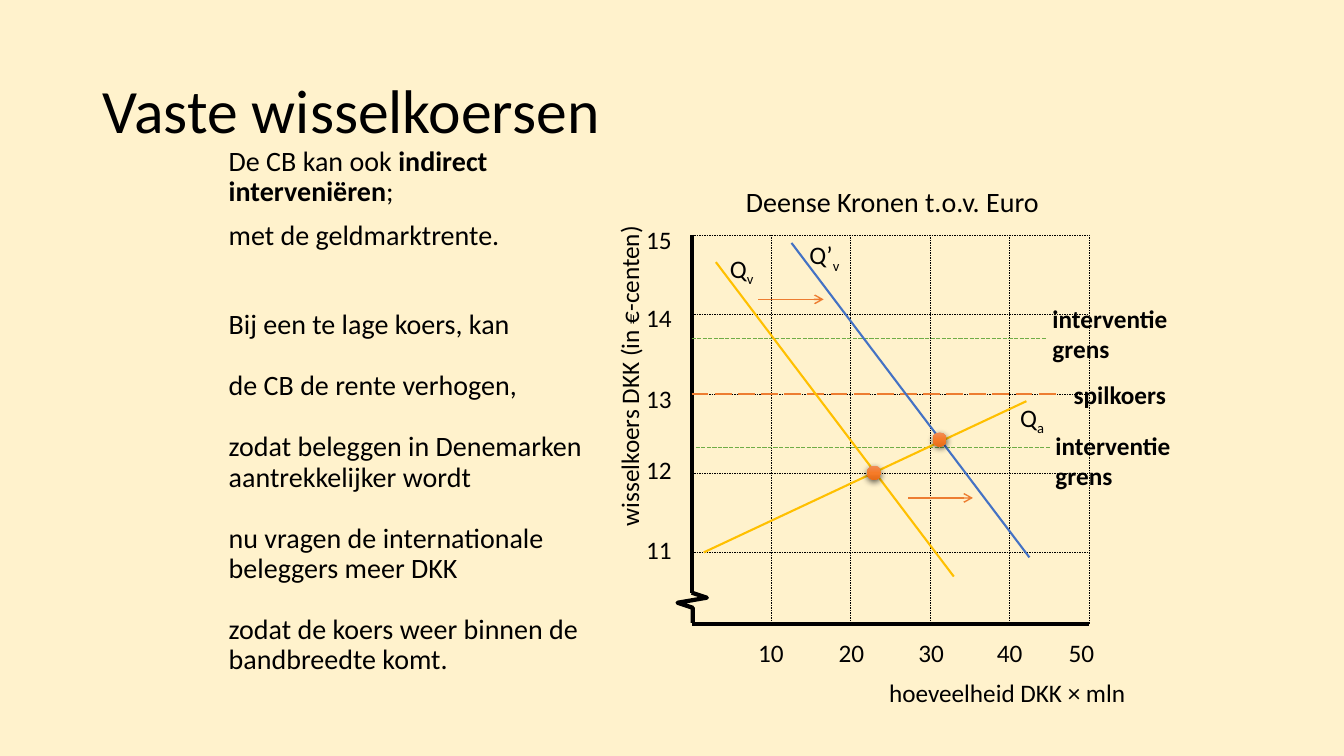
"""Build the slide on fixed exchange rates with its supply and demand diagram."""
from dataclasses import dataclass

from lxml import etree
from pptx import Presentation
from pptx.dml.color import RGBColor
from pptx.enum.dml import MSO_LINE
from pptx.enum.shapes import MSO_CONNECTOR, MSO_SHAPE
from pptx.enum.text import MSO_ANCHOR, MSO_AUTO_SIZE, PP_ALIGN
from pptx.oxml import parse_xml
from pptx.oxml.ns import nsdecls, qn
from pptx.slide import Slide
from pptx.text.text import _Paragraph as Paragraph
from pptx.util import Inches, Pt

STRAIGHT = MSO_CONNECTOR.STRAIGHT
OVAL = MSO_SHAPE.OVAL
DASH, LONG_DASH, SHORT_DASH = MSO_LINE.DASH, MSO_LINE.LONG_DASH, MSO_LINE.SQUARE_DOT
MIDDLE, LEFT = MSO_ANCHOR.MIDDLE, PP_ALIGN.LEFT
FIT_SHAPE = MSO_AUTO_SIZE.SHAPE_TO_FIT_TEXT

CREAM = RGBColor(0xFF, 0xF2, 0xCC)
BLACK = RGBColor(0x00, 0x00, 0x00)
ORANGE = RGBColor(0xED, 0x7D, 0x31)
GREEN = RGBColor(0x70, 0xAD, 0x47)
GOLD = RGBColor(0xFF, 0xC0, 0x00)
BLUE = RGBColor(0x44, 0x72, 0xC4)

FONT = "Calibri"
AXIS_X, AXIS_Y = 6.86, 6.19
GRID_TOP, GRID_RIGHT = 2.33, 10.8
BREAK_TOP = 5.88
STEP = (GRID_RIGHT - AXIS_X) / 5
DOT_SIZE = 0.14


@dataclass(frozen=True)
class Line:
    """A straight line between two points in inches."""
    x1: float
    y1: float
    x2: float
    y2: float
    color: RGBColor
    width: float
    dash: MSO_LINE | None = None
    arrow: bool = False


@dataclass(frozen=True)
class Label:
    """A short text of the diagram, with an optional subscript."""
    text: str
    left: float
    top: float
    width: float
    height: float = 0.4
    size: int = 18
    bold: bool = False
    subscript: str = ""
    rotation: int = 0


@dataclass(frozen=True)
class Step:
    """A paragraph of the explanation, with an optional bold part."""
    text: str
    before: int = 10
    after: int = 0
    bold: str = ""
    ending: str = ""


AXES = [
    Line(AXIS_X, GRID_TOP, AXIS_X, BREAK_TOP, BLACK, 3),
    Line(GRID_RIGHT, AXIS_Y, AXIS_X, AXIS_Y, BLACK, 3),
]
GRID = [
    Line(AXIS_X, GRID_TOP + i * STEP, GRID_RIGHT, GRID_TOP + i * STEP, BLACK, 0.25, DASH)
    for i in range(5)
] + [
    Line(AXIS_X + i * STEP, GRID_TOP, AXIS_X + i * STEP, AXIS_Y, BLACK, 0.25, DASH)
    for i in range(1, 6)
]
RATES = [
    Line(AXIS_X, 3.91, 10.5, 3.91, ORANGE, 1.5, LONG_DASH),
    Line(AXIS_X, 3.36, 10.37, 3.36, GREEN, 1, SHORT_DASH),
    Line(6.9, 4.44, 10.41, 4.44, GREEN, 1, SHORT_DASH),
]
CURVES = [
    Line(6.98, 5.48, 10.18, 3.98, GOLD, 1.5),
    Line(7.1, 2.6, 9.46, 5.72, GOLD, 1.5),
    Line(7.85, 2.41, 10.21, 5.53, BLUE, 1.5),
]
SHIFTS = [
    Line(7.52, 2.97, 8.17, 2.97, ORANGE, 1, arrow=True),
    Line(9.01, 4.94, 9.65, 4.94, ORANGE, 1, arrow=True),
]
AXIS_BREAK = [(AXIS_X, BREAK_TOP), (7.01, 5.93), (6.72, 5.98), (6.87, 6.03), (6.87, 6.18)]
EQUILIBRIA = [(8.6, 4.62), (9.25, 4.29)]

RATE_TICKS = {"11": 5.25, "12": 4.46, "13": 3.75, "14": 2.95, "15": 2.18}
AMOUNT_TICKS = {"10": 7.42, "20": 8.22, "30": 9.01, "40": 9.79, "50": 10.5}
LABELS = [
    Label("hoeveelheid DKK × mln", 8.72, 6.67, 2.58),
    Label("wisselkoers DKK (in €-centen)", 4.63, 3.51, 3.22, rotation=270),
    *(Label(rate, 6.31, top, 0.46) for rate, top in RATE_TICKS.items()),
    *(Label(amount, left, 6.27, 0.46) for amount, left in AMOUNT_TICKS.items()),
    Label("spilkoers", 10.55, 3.71, 1.12, bold=True),
    Label("interventie\ngrens", 10.34, 2.96, 1.35, 0.71, bold=True),
    Label("interventie\ngrens", 10.37, 4.22, 1.35, 0.71, bold=True),
    Label("Deense Kronen t.o.v. Euro", 7.3, 1.78, 3.13, 0.44, size=20),
    Label("Q", 7.14, 2.46, 0.45, subscript="v"),
    Label("Q", 10.02, 3.94, 0.45, subscript="a"),
    Label("Q’", 7.93, 2.33, 0.5, subscript="v"),
]
EXPLANATION = [
    Step("De CB kan ook ", before=0, bold="indirect interveniëren", ending=";"),
    Step("met de geldmarktrente."),
    Step("Bij een te lage koers, kan", before=42, after=12),
    Step("de CB de rente verhogen,", after=12),
    Step("zodat beleggen in Denemarken aantrekkelijker wordt", after=12),
    Step("nu vragen de internationale beleggers meer DKK", after=12),
    Step("zodat de koers weer binnen de bandbreedte komt.", after=12),
]

DOT_FILL = f"""<a:gradFill {nsdecls('a')} rotWithShape="1"><a:gsLst>
<a:gs pos="0"><a:srgbClr val="F18C57"/></a:gs>
<a:gs pos="50000"><a:srgbClr val="F67B28"/></a:gs>
<a:gs pos="100000"><a:srgbClr val="E56C19"/></a:gs>
</a:gsLst><a:lin ang="5400000" scaled="0"/></a:gradFill>"""
DOT_SHADOW = f"""<a:effectLst {nsdecls('a')}>
<a:outerShdw blurRad="57150" dist="19050" dir="5400000" algn="ctr" rotWithShape="0">
<a:srgbClr val="000000"><a:alpha val="63000"/></a:srgbClr></a:outerShdw></a:effectLst>"""


def set_font(paragraph: Paragraph, size: int, bold: bool | None = None) -> None:
    """Set the shared font of a paragraph."""
    font = paragraph.font
    font.name, font.size, font.bold = FONT, Pt(size), bold
    font.color.rgb = BLACK


def draw_line(slide: Slide, line: Line) -> None:
    """Draw a line or an arrow."""
    connector = slide.shapes.add_connector(
        STRAIGHT, Inches(line.x1), Inches(line.y1), Inches(line.x2), Inches(line.y2))
    connector.line.color.rgb = line.color
    connector.line.width = Pt(line.width)
    if line.dash is not None:
        connector.line.dash_style = line.dash
    properties = connector.element.spPr
    if line.arrow:
        etree.SubElement(properties.find(qn("a:ln")), qn("a:tailEnd"), type="arrow")
    etree.SubElement(properties, qn("a:effectLst"))


def draw_label(slide: Slide, label: Label) -> None:
    """Write a label of the diagram."""
    box = slide.shapes.add_textbox(
        Inches(label.left), Inches(label.top), Inches(label.width), Inches(label.height))
    box.rotation = label.rotation
    frame = box.text_frame
    frame.word_wrap = False
    frame.auto_size = FIT_SHAPE
    frame.text = label.text
    for paragraph in frame.paragraphs:
        set_font(paragraph, label.size, label.bold)
    if label.subscript:
        run = frame.paragraphs[0].add_run()
        run.text = label.subscript
        run.font._element.set("baseline", "-25000")


def draw_axis_break(slide: Slide) -> None:
    """Draw the zigzag at the foot of the vertical axis."""
    points = [(Inches(x), Inches(y)) for x, y in AXIS_BREAK]
    builder = slide.shapes.build_freeform(*points[0])
    builder.add_line_segments(points[1:], close=False)
    zigzag = builder.convert_to_shape()
    zigzag.shadow.inherit = False
    zigzag.fill.background()
    zigzag.line.color.rgb = BLACK
    zigzag.line.width = Pt(3)


def draw_equilibrium(slide: Slide, left: float, top: float) -> None:
    """Mark the point where two curves cross."""
    dot = slide.shapes.add_shape(
        OVAL, Inches(left), Inches(top), Inches(DOT_SIZE), Inches(DOT_SIZE))
    dot.line.fill.background()
    properties = dot.element.spPr
    properties.find(qn("a:prstGeom")).addnext(parse_xml(DOT_FILL))
    properties.append(parse_xml(DOT_SHADOW))


def write_title(slide: Slide) -> None:
    """Place and fill the title."""
    title = slide.shapes.title
    title.left, title.top = Inches(0.92), Inches(0.4)
    title.width, title.height = Inches(11.5), Inches(1.45)
    title.text_frame.text = "Vaste wisselkoersen"
    title.text_frame.vertical_anchor = MIDDLE
    heading = title.text_frame.paragraphs[0]
    heading.alignment = LEFT
    heading.line_spacing = 0.9
    set_font(heading, 44)


def write_explanation(slide: Slide) -> None:
    """Write the explanation left of the diagram."""
    box = slide.shapes.add_textbox(Inches(2.17), Inches(1.41), Inches(3.71), Inches(5.81))
    frame = box.text_frame
    frame.word_wrap = True
    for i, step in enumerate(EXPLANATION):
        paragraph = frame.add_paragraph() if i else frame.paragraphs[0]
        paragraph.line_spacing = 0.9
        paragraph.space_before, paragraph.space_after = Pt(step.before), Pt(step.after)
        set_font(paragraph, 20)
        paragraph.add_run().text = step.text
        if step.bold:
            emphasis = paragraph.add_run()
            emphasis.text = step.bold
            emphasis.font.bold = True
            paragraph.add_run().text = step.ending


def main() -> None:
    """Build and save the presentation."""
    deck = Presentation()
    deck.slide_width, deck.slide_height = Inches(13.33), Inches(7.5)
    slide = deck.slides.add_slide(deck.slide_layouts.get_by_name("Title Only"))
    slide.background.fill.solid()
    slide.background.fill.fore_color.rgb = CREAM
    write_title(slide)
    write_explanation(slide)
    for line in AXES + GRID + RATES + CURVES + SHIFTS:
        draw_line(slide, line)
    draw_axis_break(slide)
    for label in LABELS:
        draw_label(slide, label)
    for left, top in EQUILIBRIA:
        draw_equilibrium(slide, left, top)
    deck.save("out.pptx")


if __name__ == "__main__":
    main()
